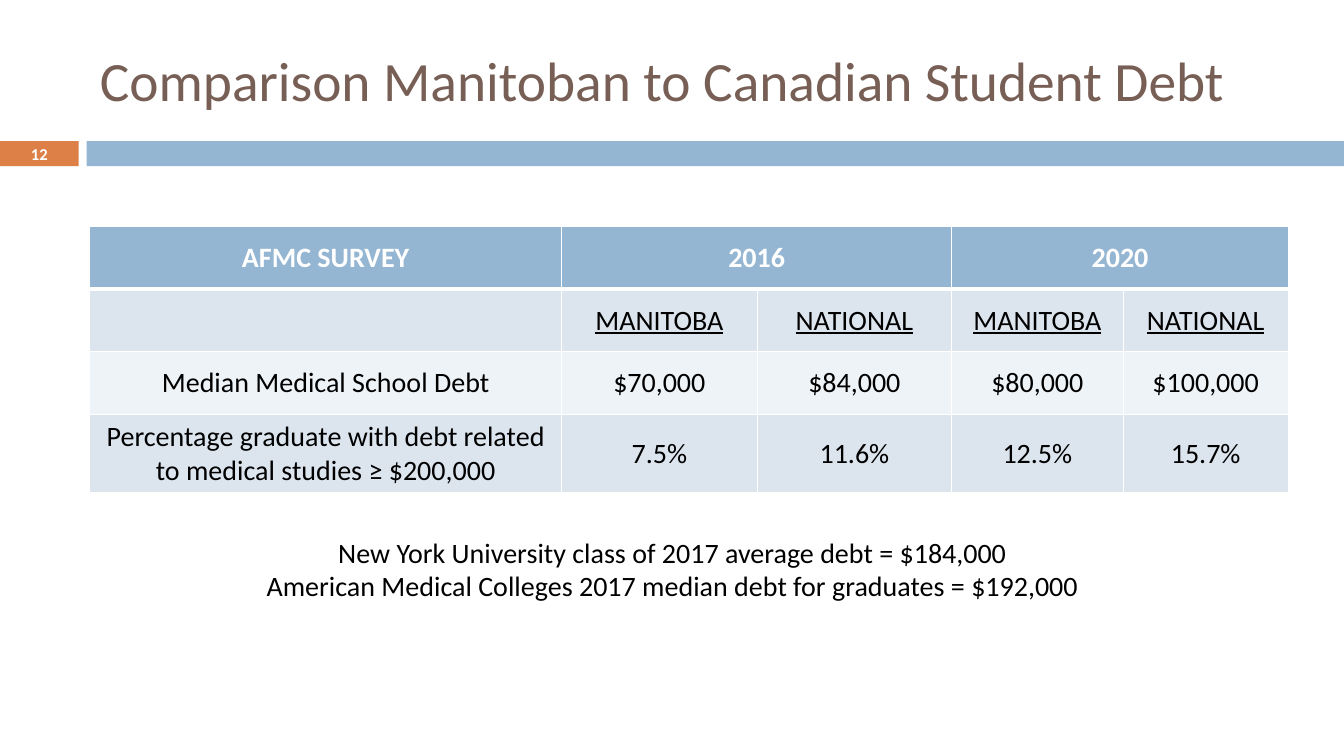
from typing import NamedTuple

from lxml.etree import SubElement
from pptx import Presentation
from pptx.dml.color import RGBColor
from pptx.enum.shapes import MSO_SHAPE
from pptx.enum.text import MSO_ANCHOR, MSO_AUTO_SIZE, PP_ALIGN
from pptx.oxml.ns import qn
from pptx.util import Emu, Inches, Pt

WIDTH, HEIGHT = Inches(13.33), Inches(7.5)
FONT = "Calibri"
WHITE, BLACK, BROWN = "FFFFFF", "000000", "775F55"
BLUE, ORANGE, PALE, LIGHT = "94B6D2", "DD8047", "DCE5EE", "EEF3F7"


class Box(NamedTuple):
    """Left, top, width and height in percent of the slide."""
    left: float
    top: float
    width: float
    height: float


class Style(NamedTuple):
    size: float
    color: str
    bold: bool = False
    under: bool = False
    align: PP_ALIGN = PP_ALIGN.CENTER


class Row(NamedTuple):
    height: float
    fill: str
    style: Style
    texts: tuple[str, ...]


BODY = Style(20, BLACK)
HEAD = Style(20, WHITE, bold=True)
LABEL = Style(20, BLACK, under=True)

BARS = [(Box(0, 18.67, 5.85, 3.33), ORANGE),
        (Box(6.45, 18.67, 93.55, 3.33), BLUE)]
COLS = [35.11, 14.55, 14.48, 12.75, 12.3]
ROWS = [
    Row(8.27, BLUE, HEAD, ("AFMC SURVEY", "2016", "", "2020", "")),
    Row(8.27, PALE, LABEL, ("",) + ("MANITOBA", "NATIONAL") * 2),
    Row(8.27, LIGHT, BODY, ("Median Medical School Debt",
                            "$70,000", "$84,000", "$80,000", "$100,000")),
    Row(10.4, PALE, BODY,
        ("Percentage graduate with debt related to medical studies ≥ $200,000",
         "7.5%", "11.6%", "12.5%", "15.7%")),
]
NOTE = ("New York University class of 2017 average debt = $184,000\n"
        "American Medical Colleges 2017 median debt for graduates = $192,000")


def rgb(code: str) -> RGBColor:
    return RGBColor.from_string(code)


def wide(share: float) -> Emu:
    return Emu(round(WIDTH * share / 100))


def tall(share: float) -> Emu:
    return Emu(round(HEIGHT * share / 100))


def place(box: Box) -> tuple[Emu, Emu, Emu, Emu]:
    return wide(box.left), tall(box.top), wide(box.width), tall(box.height)


def write(frame, text: str, style: Style) -> None:
    frame.text = text
    for para in frame.paragraphs:
        para.alignment = style.align
        para.font.size = Pt(style.size)
        for run in para.runs:
            font = run.font
            font.name, font.size = FONT, Pt(style.size)
            font.bold, font.underline = style.bold, style.under
            font.color.rgb = rgb(style.color)


def add_bar(slide, box: Box, color: str) -> None:
    bar = slide.shapes.add_shape(MSO_SHAPE.RECTANGLE, *place(box))
    bar.shadow.inherit = False
    bar.fill.solid()
    bar.fill.fore_color.rgb = rgb(color)
    bar.line.fill.background()


def add_text(slide, box: Box, text: str, style: Style, anchor: MSO_ANCHOR) -> None:
    frame = slide.shapes.add_textbox(*place(box)).text_frame
    frame.word_wrap = True
    frame.vertical_anchor = anchor
    write(frame, text, style)


def set_title(slide, box: Box, text: str, style: Style) -> None:
    title = slide.shapes.title
    title.left, title.top, title.width, title.height = place(box)
    frame = title.text_frame
    frame.auto_size = MSO_AUTO_SIZE.NONE
    frame.vertical_anchor = MSO_ANCHOR.MIDDLE
    write(frame, text, style)


def add_edges(cell, row: int) -> None:
    # The rule below the header is thicker than the rest
    sizes = {"a:lnL": 1, "a:lnR": 1,
             "a:lnT": 3 if row == 1 else 1, "a:lnB": 3 if row == 0 else 1}
    props = cell._tc.get_or_add_tcPr()
    for tag, size in sizes.items():
        line = SubElement(props, qn(tag), w=str(Pt(size)))
        fill = SubElement(line, qn("a:solidFill"))
        SubElement(fill, qn("a:srgbClr"), val=WHITE)


def add_grid(slide, left: float, top: float) -> None:
    box = Box(left, top, sum(COLS), sum(row.height for row in ROWS))
    table = slide.shapes.add_table(len(ROWS), len(COLS), *place(box)).table
    for col, share in zip(table.columns, COLS):
        col.width = wide(share)
    for r, row in enumerate(ROWS):
        table.rows[r].height = tall(row.height)
        for c, text in enumerate(row.texts):
            cell = table.cell(r, c)
            add_edges(cell, r)
            cell.fill.solid()
            cell.fill.fore_color.rgb = rgb(row.fill)
            cell.vertical_anchor = MSO_ANCHOR.MIDDLE
            write(cell.text_frame, text, row.style)
    # Each year spans its two columns
    for c in (1, 3):
        table.cell(0, c).merge(table.cell(0, c + 1))


def main() -> None:
    deck = Presentation()
    deck.slide_width, deck.slide_height = WIDTH, HEIGHT
    slide = deck.slides.add_slide(deck.slide_layouts[5])

    # Title and band
    for box, color in BARS:
        add_bar(slide, box, color)
    set_title(slide, Box(6.68, 3.33, 89.2, 14.4),
              "Comparison Manitoban to Canadian Student Debt",
              Style(39.6, BROWN, align=PP_ALIGN.LEFT))

    # Survey table and note
    add_grid(slide, 6.68, 30)
    add_text(slide, Box(15.83, 70.13, 68.42, 10.27), NOTE, BODY, MSO_ANCHOR.TOP)

    # Page number
    add_text(slide, Box(0, 18.53, 5.85, 3.6), "12",
             Style(11.9, WHITE, bold=True), MSO_ANCHOR.MIDDLE)

    deck.save("out.pptx")


if __name__ == "__main__":
    main()
